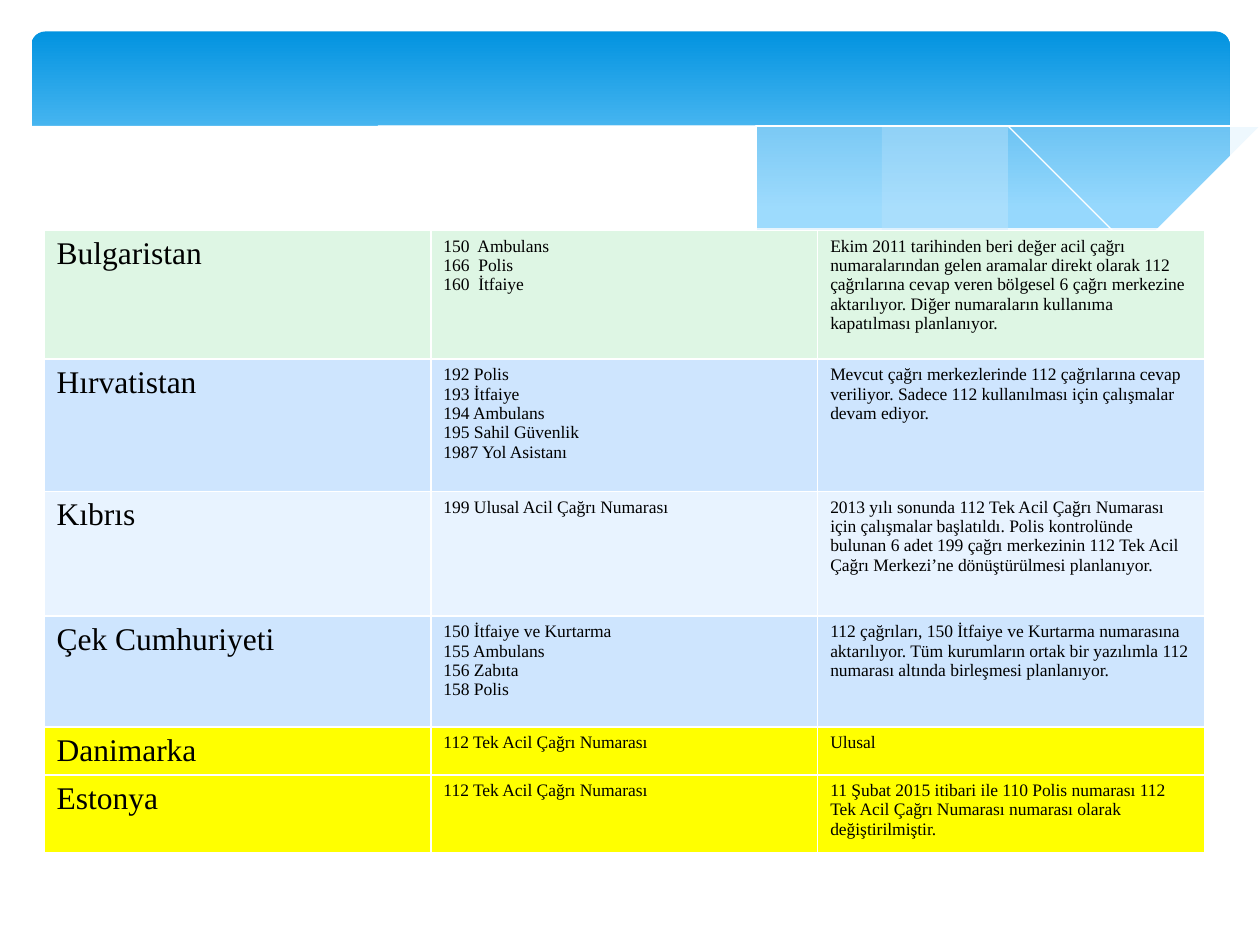
import pptx
import pptx.util
import pptx.dml.color
import pptx.enum.shapes
import pptx.oxml
from lxml import etree
from pptx.util import Inches, Pt

FONT = "Times New Roman"
WHITE = "FFFFFF"
COLUMN_WIDTH = 3.07
BORDER_TAGS = ("a:lnL", "a:lnR", "a:lnT", "a:lnB")

COUNTRIES = [
    ("Bulgaristan", ["150  Ambulans", "166  Polis", "160  İtfaiye"],
     "Ekim 2011 tarihinden beri değer acil çağrı numaralarından gelen aramalar direkt olarak "
     "112 çağrılarına cevap veren bölgesel 6 çağrı merkezine aktarılıyor. Diğer numaraların "
     "kullanıma kapatılması planlanıyor.", 1.02, "DEF6E4"),
    ("Hırvatistan",
     ["192 Polis", "193 İtfaiye", "194 Ambulans", "195 Sahil Güvenlik", "1987 Yol Asistanı"],
     "Mevcut çağrı merkezlerinde 112 çağrılarına cevap veriliyor. Sadece 112 kullanılması "
     "için çalışmalar devam ediyor.", 1.05, "CEE5FE"),
    ("Kıbrıs", ["199 Ulusal Acil Çağrı Numarası"],
     "2013 yılı sonunda 112 Tek Acil Çağrı Numarası için çalışmalar başlatıldı. Polis "
     "kontrolünde bulunan 6 adet 199 çağrı merkezinin 112 Tek Acil Çağrı Merkezi’ne "
     "dönüştürülmesi planlanıyor.", 0.99, "E8F3FF"),
    ("Çek Cumhuriyeti",
     ["150 İtfaiye ve Kurtarma", "155 Ambulans", "156 Zabıta", "158 Polis"],
     "112 çağrıları, 150 İtfaiye ve Kurtarma numarasına aktarılıyor. Tüm kurumların ortak bir "
     "yazılımla 112 numarası altında birleşmesi planlanıyor.", 0.88, "CEE5FE"),
    ("Danimarka", ["112 Tek Acil Çağrı Numarası"], "Ulusal", 0.38, "FFFF00"),
    ("Estonya", ["112 Tek Acil Çağrı Numarası"],
     "11 Şubat 2015 itibari ile 110 Polis numarası 112  Tek Acil Çağrı Numarası numarası "
     "olarak değiştirilmiştir.", 0.62, "FFFF00"),
]

RIGHT_WAVE = [
    [(9.76, 0.94), (9.35, 1.01), (8.91, 1.1), (8.32, 1.25), (7.53, 1.43), (6.61, 1.6)],
    [(6.61, 1.6), (7.19, 1.67), (7.69, 1.71), (8.14, 1.72), (8.63, 1.7), (9.05, 1.63),
     (9.42, 1.54), (9.76, 1.41)],
]
MIDDLE_WAVE = [
    [(8.93, 1.67), (8.37, 1.59), (7.75, 1.49), (7.06, 1.34), (6.29, 1.16), (5.69, 1.02),
     (5.14, 0.92), (4.65, 0.86), (4.2, 0.82), (3.8, 0.8), (3.44, 0.8), (3.13, 0.82), (2.86, 0.86)],
    [(2.86, 0.86), (3.42, 0.94), (4.04, 1.06), (4.91, 1.26), (5.66, 1.43), (6.34, 1.56),
     (6.95, 1.65), (7.48, 1.7), (8.07, 1.73), (8.48, 1.72), (8.93, 1.67)],
]
FALLING_LINE = [
    [(3.09, 0.9), (3.44, 0.84), (3.87, 0.82), (4.33, 0.82), (4.89, 0.84), (5.56, 0.91),
     (6.36, 1.03), (7.27, 1.2), (8.31, 1.45), (9.07, 1.66)],
]
RISING_LINE = [
    [(6.13, 1.51), (6.53, 1.41), (7.2, 1.24), (8.06, 1.04), (8.66, 0.93), (9.24, 0.84), (9.75, 0.8)],
]
FRONT_WAVE = [
    [(9.77, 1.41), (9.4, 1.54), (8.99, 1.64), (8.5, 1.7), (8.09, 1.71), (7.61, 1.7),
     (7.08, 1.65), (6.48, 1.56), (5.79, 1.44), (5.03, 1.28), (4.47, 1.14), (3.91, 1.02),
     (3.4, 0.92), (2.92, 0.85), (2.5, 0.81), (2.11, 0.78), (1.77, 0.78), (1.46, 0.79),
     (1.06, 0.83), (0.76, 0.89), (0.52, 0.96), (0.36, 1.02), (0.23, 1.07)],
    [(0.23, 2.24), (9.77, 2.24)],
]
WAVES = [
    (RIGHT_WAVE, "C6E7FC", 29),
    (MIDDLE_WAVE, "C6E7FC", 40),
    (FALLING_LINE, None, 100),
    (RISING_LINE, None, 100),
    (FRONT_WAVE, WHITE, 100),
]


def rgb(value):
    return pptx.dml.color.RGBColor.from_string(value)


def smooth_curve(points, steps=5):
    padded = [points[0], *points, points[-1]]
    curve = [points[0]]
    for before, start, end, after in zip(padded, padded[1:], padded[2:], padded[3:]):
        for step in range(1, steps + 1):
            t = step / steps
            curve.append(tuple(
                (2 * b + (c - a) * t + (2 * a - 5 * b + 4 * c - d) * t ** 2
                 + (3 * b - a - 3 * c + d) * t ** 3) / 2
                for a, b, c, d in zip(before, start, end, after)))
    return curve


def add_wave(slide, curves, color, opacity):
    points = [point for curve in curves for point in smooth_curve(curve)]
    builder = slide.shapes.build_freeform(*points[0], scale=Inches(1))
    builder.add_line_segments(points[1:], close=color is not None)
    shape = builder.convert_to_shape()
    shape.shadow.inherit = False
    if color is None:
        shape.fill.background()
        shape.line.color.rgb = rgb(WHITE)
        shape.line.width = Pt(0)
        return
    shape.line.fill.background()
    shape.fill.solid()
    shape.fill.fore_color.rgb = rgb(color)
    if opacity < 100:
        color_element = shape.fill._xPr.find(".//" + pptx.oxml.ns.qn("a:srgbClr"))
        alpha = etree.SubElement(color_element, pptx.oxml.ns.qn("a:alpha"))
        alpha.set("val", str(opacity * 1000))


def add_banner(slide):
    banner = slide.shapes.add_shape(
        pptx.enum.shapes.MSO_SHAPE.ROUNDED_RECTANGLE,
        Inches(0.25), Inches(0.25), Inches(9.51), Inches(1.56))
    banner.adjustments[0] = 0.07
    banner.shadow.inherit = False
    banner.line.fill.background()
    banner.fill.gradient()
    banner.fill.gradient_angle = 270
    for stop, (position, color) in zip(banner.fill.gradient_stops, [(0, "0293E0"), (0.9, "83D3FE")]):
        stop.position = position
        stop.color.rgb = rgb(color)


def set_borders(cell):
    properties = cell._tc.get_or_add_tcPr()
    for tag in BORDER_TAGS:
        border = etree.SubElement(properties, pptx.oxml.ns.qn(tag), w=str(Pt(1)))
        fill = etree.SubElement(border, pptx.oxml.ns.qn("a:solidFill"))
        etree.SubElement(fill, pptx.oxml.ns.qn("a:srgbClr"), val=WHITE)


def fill_cell(cell, text, size, color):
    set_borders(cell)
    cell.fill.solid()
    cell.fill.fore_color.rgb = rgb(color)
    cell.text_frame.text = text
    for paragraph in cell.text_frame.paragraphs:
        for run in paragraph.runs:
            run.font.name = FONT
            run.font.size = Pt(size)
            run.font.color.rgb = rgb("000000")


def add_country_table(slide):
    total_height = sum(height for *_, height, _ in COUNTRIES)
    table = slide.shapes.add_table(
        len(COUNTRIES), 3, Inches(0.35), Inches(1.83),
        Inches(3 * COLUMN_WIDTH), Inches(total_height)).table
    table.first_row = False
    table.horz_banding = False
    for column in table.columns:
        column.width = Inches(COLUMN_WIDTH)
    for row, (country, numbers, status, height, color) in zip(table.rows, COUNTRIES):
        row.height = Inches(height)
        texts = (country, "\n".join(numbers), status)
        for cell, text, size in zip(row.cells, texts, (18, 10, 10)):
            fill_cell(cell, text, size, color)


def main():
    presentation = pptx.Presentation()
    presentation.slide_width = Inches(10)
    presentation.slide_height = Inches(7.5)
    slide = presentation.slides.add_slide(presentation.slide_layouts[6])
    add_banner(slide)
    for curves, color, opacity in WAVES:
        add_wave(slide, curves, color, opacity)
    add_country_table(slide)
    presentation.save("out.pptx")


if __name__ == "__main__":
    main()
